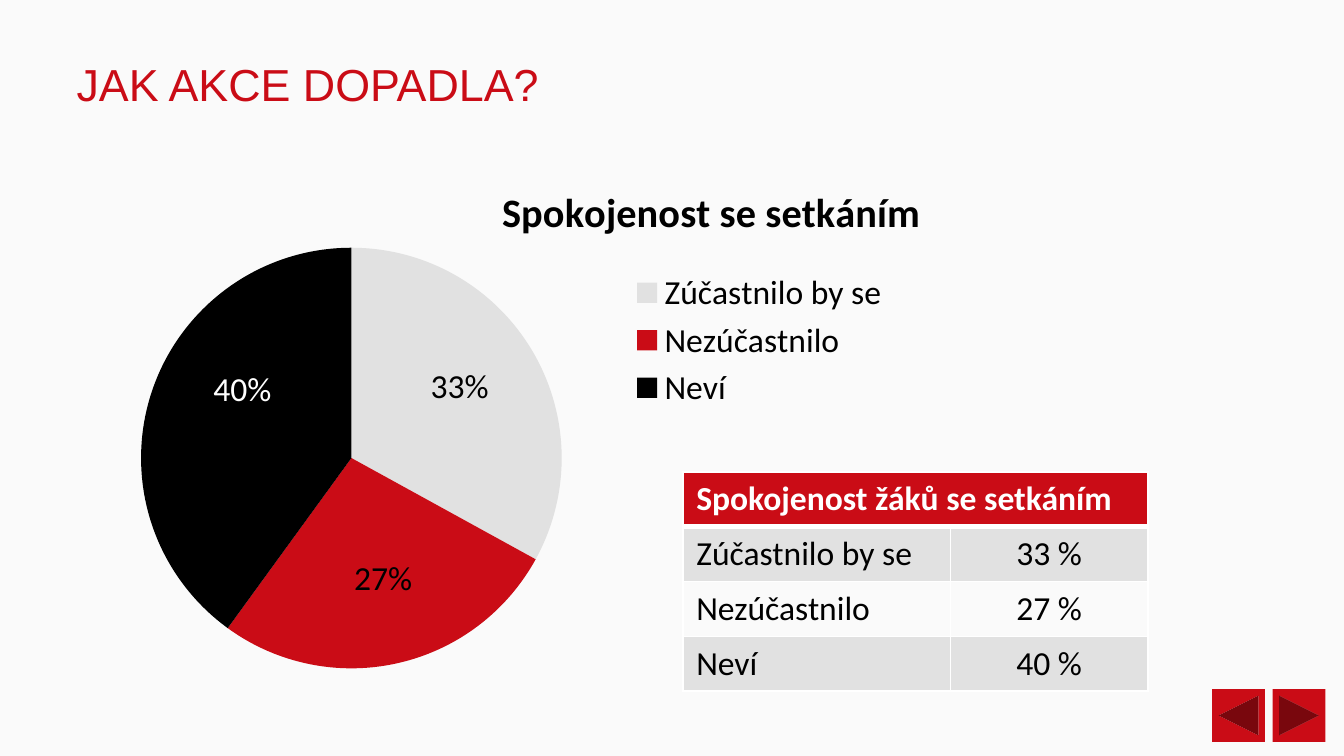
from typing import NamedTuple

from lxml import etree
from pptx import Presentation
from pptx.chart.data import CategoryChartData
from pptx.dml.color import RGBColor
from pptx.enum import chart as ch, shapes, text
from pptx.oxml.ns import qn
from pptx.util import Pt

RED = RGBColor(0xCA, 0x0C, 0x16)
GREY = RGBColor(0xE1, 0xE1, 0xE1)
PAPER = RGBColor(0xFA, 0xFA, 0xFA)
BLACK = RGBColor(0, 0, 0)
WHITE = RGBColor(0xFF, 0xFF, 0xFF)


class Answer(NamedTuple):
    name: str
    percent: int
    color: RGBColor
    label_color: RGBColor
    label_shift: tuple[float, float]
    row_color: RGBColor


class Button(NamedTuple):
    kind: shapes.MSO_SHAPE
    left: float


ANSWERS = [
    Answer("Zúčastnilo by se", 33, GREY, BLACK, (0.02, -0.03), GREY),
    Answer("Nezúčastnilo", 27, RED, BLACK, (0.01, 0.03), PAPER),
    Answer("Neví", 40, BLACK, WHITE, (-0.01, -0.06), GREY),
]
BUTTONS = [
    Button(shapes.MSO_SHAPE.ACTION_BUTTON_FORWARD_OR_NEXT, 681.8),
    Button(shapes.MSO_SHAPE.ACTION_BUTTON_BACK_OR_PREVIOUS, 649.4),
]


def style_font(font, size: float, color: RGBColor, bold: bool = False,
               name: str = "Calibri") -> None:
    font.name, font.size, font.bold = name, Pt(size), bold
    font.color.rgb = color


def add_run(p, words: str, size: float, color: RGBColor, bold: bool = False,
            name: str = "Calibri") -> None:
    r = p.add_run()
    r.text = words
    style_font(r.font, size, color, bold, name)


def set_layout(parent, after: str | None, **values: float | str) -> None:
    """Give a chart part a manual layout, placed after the named child."""
    for old in parent.findall(qn("c:layout")):
        parent.remove(old)
    layout = etree.Element(qn("c:layout"))
    manual = etree.SubElement(layout, qn("c:manualLayout"))
    for tag, value in values.items():
        etree.SubElement(manual, qn(f"c:{tag}")).set("val", str(value))
    if after:
        parent.find(qn(after)).addnext(layout)
    else:
        parent.insert(0, layout)


def add_button(slide, button: Button) -> None:
    sp = slide.shapes.add_shape(button.kind, Pt(button.left), Pt(369.2), Pt(28.3), Pt(28.3))
    sp.shadow.inherit = False
    sp.fill.solid()
    sp.fill.fore_color.rgb = RED
    sp.line.fill.background()


def add_title(slide) -> None:
    sp = slide.shapes.title
    sp.left, sp.top, sp.width, sp.height = Pt(33.8), Pt(26.6), Pt(371.5), Pt(36)
    tf = sp.text_frame
    tf.word_wrap = True
    tf.vertical_anchor = text.MSO_ANCHOR.TOP
    p = tf.paragraphs[0]
    p.alignment = text.PP_ALIGN.LEFT
    add_run(p, "JAK AKCE DOPADLA?", 24, RED, name="Arial")


def add_pie(slide) -> None:
    data = CategoryChartData()
    data.categories = [a.name for a in ANSWERS]
    data.add_series("Spokojenost se setkáním", [a.percent for a in ANSWERS])
    chart = slide.shapes.add_chart(ch.XL_CHART_TYPE.PIE, Pt(20.2), Pt(72),
                                   Pt(480.2), Pt(319.7), data).chart
    style_font(chart.font, 18, BLACK)

    chart.has_title = True
    add_run(chart.chart_title.text_frame.paragraphs[0],
            "Spokojenost se setkáním", 21.6, BLACK, True)
    set_layout(chart.chart_title._element, "c:tx",
               xMode="edge", yMode="edge", x=0.51, y=0.07)

    chart.has_legend = True
    chart.legend.position = ch.XL_LEGEND_POSITION.RIGHT
    chart.legend.include_in_layout = False
    set_layout(chart.legend._element, "c:legendPos",
               xMode="edge", yMode="edge", x=0.65, y=0.22, w=0.31, h=0.25)

    plot = chart.plots[0]
    plot.vary_by_categories = True
    set_layout(plot._element.getparent(), None, layoutTarget="inner",
               xMode="edge", yMode="edge", x=0.115, y=0.19, w=0.47, h=0.705)

    series = plot.series[0]
    labels = series.data_labels
    labels.show_percentage, labels.show_value = True, False
    for i, answer in enumerate(ANSWERS):
        point = series.points[i]
        point.format.fill.solid()
        point.format.fill.fore_color.rgb = answer.color
        style_font(point.data_label.font, 18, answer.label_color)
        point.data_label.position = ch.XL_LABEL_POSITION.CENTER
    for answer, label in zip(ANSWERS, series._element.iter(qn("c:dLbl"))):
        label.find(qn("c:showVal")).set("val", "0")
        label.find(qn("c:showPercent")).set("val", "1")
        dx, dy = answer.label_shift
        set_layout(label, "c:idx", x=dx, y=dy)


def set_borders(cell, bottom: float) -> None:
    tc_pr = cell._tc.get_or_add_tcPr()
    for i, (side, width) in enumerate(zip("LRTB", (1, 1, 1, bottom))):
        line = etree.Element(qn(f"a:ln{side}"), w=str(int(Pt(width))))
        fill = etree.SubElement(line, qn("a:solidFill"))
        etree.SubElement(fill, qn("a:srgbClr"), val=str(WHITE))
        tc_pr.insert(i, line)


def fill_cell(cell, words: str, fill: RGBColor, color: RGBColor = BLACK,
              bold: bool = False, centred: bool = False, bottom: float = 1) -> None:
    cell.fill.solid()
    cell.fill.fore_color.rgb = fill
    set_borders(cell, bottom)
    p = cell.text_frame.paragraphs[0]
    if centred:
        p.alignment = text.PP_ALIGN.CENTER
        cell.vertical_anchor = text.MSO_ANCHOR.MIDDLE
    if words:
        add_run(p, words, 18, color, bold)


def add_answer_table(slide) -> None:
    table = slide.shapes.add_table(len(ANSWERS) + 1, 2, Pt(365.8), Pt(252.9),
                                   Pt(249.1), Pt(116.8)).table
    table.first_row = table.horz_banding = False
    for column, width in zip(table.columns, (143.3, 105.8)):
        column.width = Pt(width)
    for row, height in zip(table.rows, (28.6, 29.4, 29.4, 29.4)):
        row.height = Pt(height)
    table.cell(0, 0).merge(table.cell(0, 1))
    for column, words in enumerate(("Spokojenost žáků se setkáním", "")):
        fill_cell(table.cell(0, column), words, RED, WHITE, bold=True, bottom=3)
    for i, answer in enumerate(ANSWERS, 1):
        fill_cell(table.cell(i, 0), answer.name, answer.row_color)
        fill_cell(table.cell(i, 1), f"{answer.percent} %", answer.row_color, centred=True)


def main() -> None:
    prs = Presentation()
    prs.slide_width, prs.slide_height = Pt(720), Pt(405)
    slide = prs.slides.add_slide(prs.slide_layouts[5])
    slide.background.fill.solid()
    slide.background.fill.fore_color.rgb = PAPER
    for button in BUTTONS:
        add_button(slide, button)
    add_title(slide)
    add_pie(slide)
    add_answer_table(slide)
    prs.save("out.pptx")


if __name__ == "__main__":
    main()
